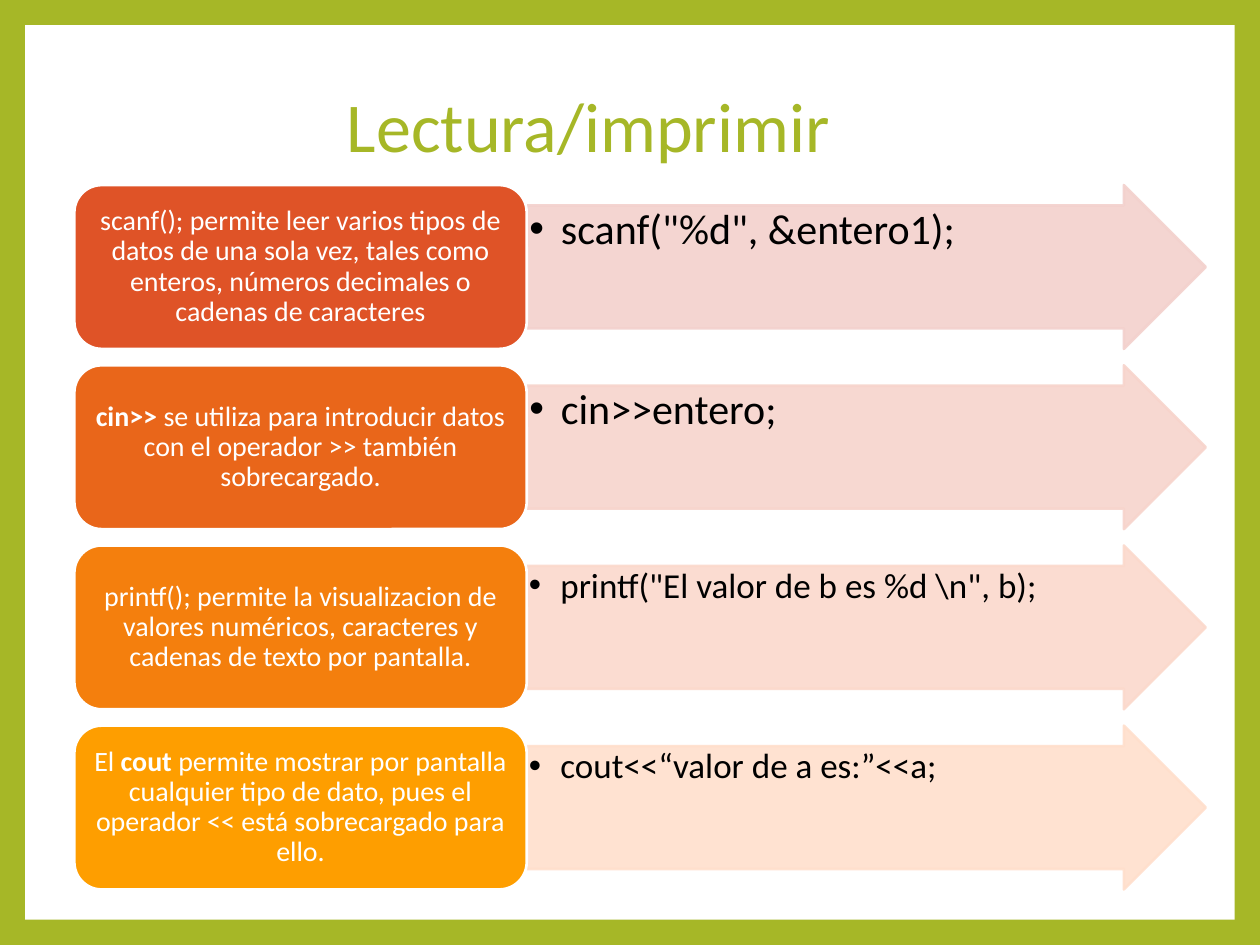
"""Build the slide that pairs each input or output call with an example."""
import pptx
import pptx.util
import pptx.dml.color
import pptx.enum.shapes
import pptx.enum.text
import pptx.oxml.ns
import lxml.etree

Pt = pptx.util.Pt
Kind = pptx.enum.shapes.MSO_SHAPE
Align = pptx.enum.text.PP_ALIGN
Mid = pptx.enum.text.MSO_ANCHOR.MIDDLE
Top = pptx.enum.text.MSO_ANCHOR.TOP

THEME = {
    "font": "Calibri", "green": "A6B727", "white": "FFFFFF", "black": "000000",
    "title": 40, "box": 16, "large": 24, "small": 20,
}

ROWS = [
    ("scanf(); permite leer varios tipos de datos de una sola vez, tales como "
     "enteros, números decimales o cadenas de caracteres",
     'scanf("%d", &entero1);', "large", "DF5327", "F3D1CD"),
    ("*cin>> *se utiliza para introducir datos con el operador >> también "
     "sobrecargado.",
     "cin>>entero;", "large", "E9661A", "F7D4CC"),
    ("printf(); permite la visualizacion de valores numéricos, caracteres y "
     "cadenas de texto por pantalla.",
     'printf("El valor de b es %d \\n", b);', "small", "F47F0D", "FBD9CC"),
    ("El *cout* permite mostrar por pantalla cualquier tipo de dato, pues el "
     "operador << está sobrecargado para ello.",
     "cout<<“valor de a es:”<<a;", "small", "FE9E00", "FFDFCC"),
]


def put(item, vals):
    for key, val in vals.items():
        setattr(item, key, val)


def rgb(code):
    return pptx.dml.color.RGBColor.from_string(code)


def add(node, tag, **attrs):
    return lxml.etree.SubElement(node, pptx.oxml.ns.qn(tag), attrs)


class Deck:
    def __init__(self, theme):
        self.theme = theme
        self.file = pptx.Presentation()
        put(self.file, {"slide_width": Pt(720), "slide_height": Pt(540)})
        self.slide = self.file.slides.add_slide(self.file.slide_layouts[5])

    def back(self, code):
        fill = self.slide.background.fill
        fill.solid()
        fill.fore_color.rgb = rgb(code)

    def shape(self, kind, area, code, edge=None):
        shape = self.slide.shapes.add_shape(kind, *map(Pt, area))
        shape.shadow.inherit = False
        shape.fill.solid()
        shape.fill.fore_color.rgb = rgb(code)
        if edge:
            shape.line.color.rgb = rgb(edge)
            shape.line.width = Pt(1.5)
        else:
            shape.line.fill.background()
        return shape

    def label(self, shape, text, size, code, align, anchor, pad=(0, 0), dot=False):
        frame = shape.text_frame
        wide, high = map(Pt, pad)
        put(frame, {"word_wrap": True, "vertical_anchor": anchor,
                    "margin_left": wide, "margin_right": wide,
                    "margin_top": high, "margin_bottom": high})
        para = frame.paragraphs[0]
        put(para, {"alignment": align, "line_spacing": 0.9})
        if dot:
            props = para._p.get_or_add_pPr()
            props.set("marL", str(Pt(18)))
            props.set("indent", str(-Pt(18)))
            add(props, "a:buFont", typeface="Arial")
            add(props, "a:buChar", char="•")
        for i, part in enumerate(text.split("*")):
            if part:
                run = para.add_run()
                run.text = part
                put(run.font, {"name": self.theme["font"], "size": Pt(size),
                               "bold": i % 2 == 1})
                run.font.color.rgb = rgb(code)

    def title(self, text, area):
        shape = self.slide.shapes.title
        put(shape, dict(zip(("left", "top", "width", "height"), map(Pt, area))))
        self.label(shape, text, self.theme["title"], self.theme["green"],
                   Align.CENTER, Mid, (7.2, 3.6))

    def arrow(self, text, size, area, code):
        shape = self.shape(Kind.RIGHT_ARROW, area, code, code)
        shape.adjustments[0] = 0.75
        shape.adjustments[1] = 0.5
        for node in shape._element.spPr.iter(pptx.oxml.ns.qn("a:srgbClr")):
            add(node, "a:alpha", val="90000")
        self.label(shape, text, size, self.theme["black"], Align.LEFT, Top,
                   (size / 16, size / 16), True)

    def box(self, text, area, code):
        white = self.theme["white"]
        shape = self.shape(Kind.ROUNDED_RECTANGLE, area, code, white)
        self.label(shape, text, self.theme["box"], white, Align.CENTER, Mid,
                   (4.8, 2.4))


def main():
    deck = Deck(THEME)
    deck.back(THEME["green"])
    panel = deck.shape(Kind.RECTANGLE, (14.4, 14.4, 691.2, 511.2), THEME["white"])
    deck.slide.shapes.title._element.addprevious(panel._element)
    deck.title("Lectura/imprimir", (44.6, 20.9, 583.2, 106.6))
    left, split, right, high, step = 42.5, 301, 689, 93.6, 102.96
    for i, (note, code, size, dark, light) in enumerate(ROWS):
        top = 105.8 + i * step
        deck.arrow(code, THEME[size], (split, top, right - split, high), light)
        deck.box(note, (left, top, split - left, high), dark)
    deck.file.save("out.pptx")


if __name__ == "__main__":
    main()
